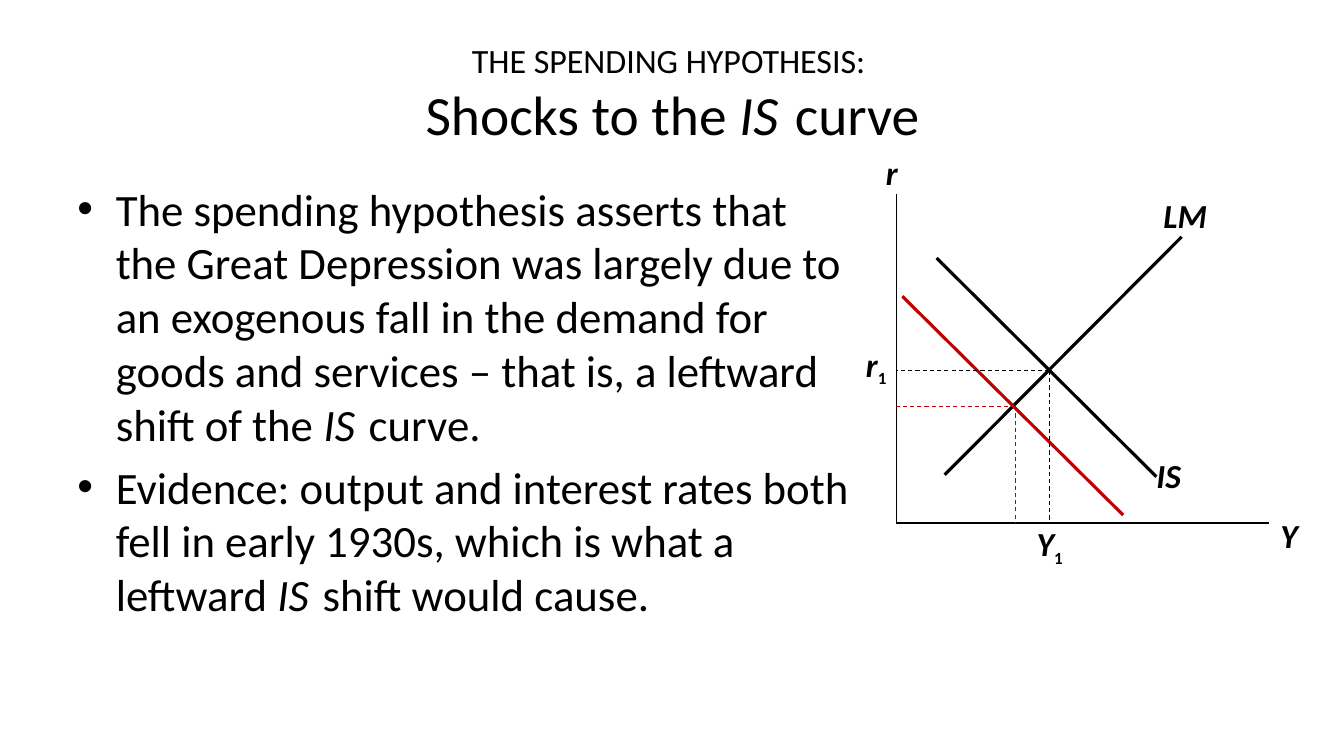
from lxml import etree
from pptx import Presentation
from pptx.dml.color import RGBColor
from pptx.enum.dml import MSO_LINE_DASH_STYLE as Dash
from pptx.enum.shapes import MSO_CONNECTOR as Connector
from pptx.enum.text import MSO_ANCHOR as Anchor, MSO_AUTO_SIZE as AutoSize, PP_ALIGN as Align
from pptx.oxml.ns import qn
from pptx.util import Inches, Pt

COLORS = {"ink": "000000", "shift": "C00000"}
FONT = "Calibri"


def add_text(paragraph, text, size, italic=False, bold=False, subscript=False):
    run = paragraph.add_run()
    run.text = text
    font = run.font
    font.name, font.size = FONT, Pt(size)
    font.italic, font.bold = italic, bold
    font.color.rgb = RGBColor.from_string(COLORS["ink"])
    if subscript:
        run._r.get_or_add_rPr().set("baseline", "-25000")


def add_is_phrase(paragraph, before, after, size, gap_size):
    """Sentence with an italic IS followed by a narrow space."""
    add_text(paragraph, before, size)
    add_text(paragraph, "IS", size, italic=True)
    add_text(paragraph, " ", gap_size)
    add_text(paragraph, after, size)


def place(shape, left, top, width, height):
    shape.left, shape.top = Inches(left), Inches(top)
    shape.width, shape.height = Inches(width), Inches(height)


def build_title(slide, left, top, width, height):
    title = slide.shapes.title
    place(title, left, top, width, height)
    frame = title.text_frame
    frame.auto_size = AutoSize.NONE
    frame.vertical_anchor = Anchor.MIDDLE
    heading = frame.paragraphs[0]
    heading.alignment = Align.CENTER
    add_text(heading, "THE SPENDING HYPOTHESIS: ", 24.3)
    heading.add_line_break()
    add_is_phrase(heading, "Shocks to the ", " curve", 39.6, 12.6)


def build_argument(slide, left, top, width, height):
    points = [
        ("The spending hypothesis asserts that the Great Depression was largely due to "
         "an exogenous fall in the demand for goods and services – that is, a leftward "
         "shift of the ", " curve."),
        ("Evidence: output and interest rates both fell in early 1930s, which is what a "
         "leftward ", " shift would cause."),
    ]
    frame = slide.shapes.add_textbox(
        Inches(left), Inches(top), Inches(width), Inches(height)).text_frame
    frame.word_wrap = True
    for number, (before, after) in enumerate(points):
        point = frame.add_paragraph() if number else frame.paragraphs[0]
        point.space_before = Pt(6.4)
        # Hanging bullet
        props = point._p.get_or_add_pPr()
        props.set("marL", str(Inches(0.38)))
        props.set("indent", str(-Inches(0.38)))
        etree.SubElement(props, qn("a:buFont")).set("typeface", "Arial")
        etree.SubElement(props, qn("a:buChar")).set("char", "•")
        add_is_phrase(point, before, after, 32, 11)


def add_line(slide, start, end, width, color="ink", dashed=False):
    line = slide.shapes.add_connector(
        Connector.STRAIGHT, *(Inches(value) for value in (*start, *end)))
    line.line.color.rgb = RGBColor.from_string(COLORS[color])
    line.line.width = Pt(width)
    if dashed:
        line.line.dash_style = Dash.DASH
    etree.SubElement(line._element.spPr, qn("a:effectLst"))


def add_label(slide, left, top, width, symbol, subscript="", align=Align.CENTER):
    frame = slide.shapes.add_textbox(
        Inches(left), Inches(top), Inches(width), Inches(0.5)).text_frame
    frame.word_wrap = True
    label = frame.paragraphs[0]
    label.alignment = align
    add_text(label, symbol, 24, italic=True, bold=True)
    if subscript:
        add_text(label, subscript, 21, bold=True, subscript=True)


def build_is_lm_graph(slide, left, top, width, height):
    def at(x, y):
        return left + x, top + y

    # Axes
    origin = at(0, height)
    add_line(slide, at(0, 0), origin, 1)
    add_line(slide, origin, at(width, height), 1)

    # IS, LM and the shifted IS
    curves = [((0.4, 0.64), (2.58, 2.81), "ink"),
              ((0.48, 2.79), (2.83, 0.43), "ink"),
              ((0.06, 1.02), (2.25, 3.19), "shift")]
    for start, end, color in curves:
        add_line(slide, at(*start), at(*end), 2.25, color)

    # Dashed guides from each equilibrium to both axes
    for x, y, color in [(1.52, 1.76, "ink"), (1.18, 2.11, "shift")]:
        for foot in [(0, y), (x, height)]:
            add_line(slide, at(x, y), at(*foot), 0.75, color, dashed=True)

    # Labels
    add_label(slide, *at(-0.27, -0.46), 0.45, "r")
    add_label(slide, *at(width - 0.12, height - 0.13), 0.63, "Y")
    add_label(slide, *at(2.48, 2.54), 0.75, "IS", align=Align.LEFT)
    add_label(slide, *at(2.55, -0.04), 0.85, "LM", align=Align.LEFT)
    add_label(slide, *at(-0.45, 1.44), 0.5, "r", "1")
    add_label(slide, *at(1.23, height - 0.05), 0.58, "Y", "1")


def main():
    deck = Presentation()
    deck.slide_width, deck.slide_height = Inches(13.33), Inches(7.5)
    slide = deck.slides.add_slide(deck.slide_layouts[5])
    build_title(slide, 0.67, 0.3, 12, 1.25)
    build_argument(slide, 0.67, 1.75, 7.9, 4.95)
    build_is_lm_graph(slide, 8.89, 1.92, 3.7, 3.27)
    deck.save("out.pptx")


if __name__ == "__main__":
    main()
